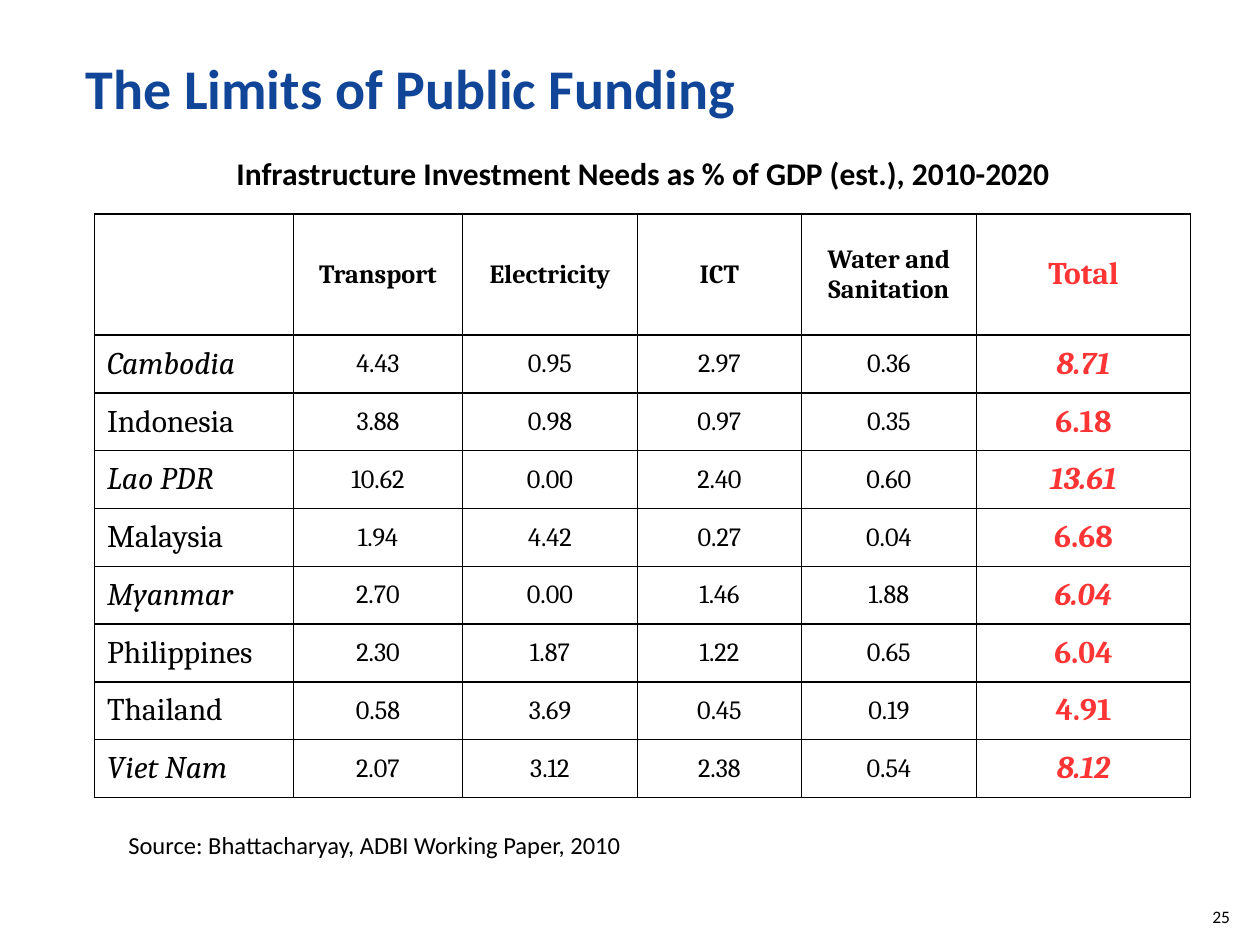
"""Build a slide on infrastructure investment needs in eight countries."""
import dataclasses
import typing

import lxml.etree
import pptx
import pptx.dml.color
import pptx.enum.text
import pptx.oxml.ns
import pptx.util

ALIGN = pptx.enum.text.PP_ALIGN
ANCHOR = pptx.enum.text.MSO_ANCHOR
UNIT = pptx.util.Inches(0.1)


@dataclasses.dataclass(frozen=True)
class Theme:
    heading_font: str = "Calibri"
    table_font: str = "Cambria"
    blue: str = "104597"
    black: str = "000000"
    red: str = "FF3535"
    title: int = 32
    large: int = 18
    figure: int = 15
    source: int = 14
    number: int = 10
    border: int = 1


class Area(typing.NamedTuple):
    column: float
    row: float
    columns: float
    rows: float

    def lengths(self) -> list[int]:
        return [grid(value) for value in self]


class Country(typing.NamedTuple):
    name: str
    figures: str
    italic: bool = False


THEME = Theme()
PAGE = Area(0, 0, 100, 75)
TABLE = Area(7.5, 17, 87.1, 46.3)
COLUMN_WIDTHS = (15.8, 13.4, 13.9, 13, 13.9, 17)
HEADER_HEIGHT = 9.6
HEADERS = ("", "Transport", "Electricity", "ICT", "Water and Sanitation", "Total")
COUNTRIES = (
    Country("Cambodia", "4.43 0.95 2.97 0.36 8.71", italic=True),
    Country("Indonesia", "3.88 0.98 0.97 0.35 6.18"),
    Country("Lao PDR", "10.62 0.00 2.40 0.60 13.61", italic=True),
    Country("Malaysia", "1.94 4.42 0.27 0.04 6.68"),
    Country("Myanmar", "2.70 0.00 1.46 1.88 6.04", italic=True),
    Country("Philippines", "2.30 1.87 1.22 0.65 6.04"),
    Country("Thailand", "0.58 3.69 0.45 0.19 4.91"),
    Country("Viet Nam", "2.07 3.12 2.38 0.54 8.12", italic=True),
)


def grid(units: float) -> int:
    return round(units * UNIT)


def write(frame, text: str, *, size: int, font: str = THEME.heading_font,
          color: str = THEME.black, bold: bool = False, italic: bool = False,
          align=ALIGN.LEFT) -> None:
    para = frame.paragraphs[0]
    para.alignment = align
    span = para.add_run()
    span.text = text
    span.font.name = font
    span.font.size = pptx.util.Pt(size)
    span.font.bold = bold
    span.font.italic = italic
    span.font.color.rgb = pptx.dml.color.RGBColor.from_string(color)


def add_text(page, area: Area, text: str, anchor=ANCHOR.TOP, **style) -> None:
    frame = page.shapes.add_textbox(*area.lengths()).text_frame
    frame.word_wrap = True
    frame.vertical_anchor = anchor
    write(frame, text, **style)


def outline(cell) -> None:
    properties = cell._tc.get_or_add_tcPr()
    for side in ("a:lnL", "a:lnR", "a:lnT", "a:lnB"):
        line = lxml.etree.SubElement(properties, pptx.oxml.ns.qn(side),
                                     w=str(pptx.util.Pt(THEME.border)))
        fill = lxml.etree.SubElement(line, pptx.oxml.ns.qn("a:solidFill"))
        lxml.etree.SubElement(fill, pptx.oxml.ns.qn("a:srgbClr"), val=THEME.black)
    cell.fill.background()


def fill_row(table, row: int, texts: typing.Sequence[str], italic: bool = False) -> None:
    last = len(texts) - 1
    for column, text in enumerate(texts):
        cell = table.cell(row, column)
        cell.vertical_anchor = ANCHOR.MIDDLE
        outline(cell)
        if text:
            write(cell.text_frame, text, font=THEME.table_font,
                  size=THEME.large if column in (0, last) else THEME.figure,
                  color=THEME.red if column == last else THEME.black,
                  bold=row == 0 or column == last,
                  italic=italic and column in (0, last),
                  align=ALIGN.CENTER if column else ALIGN.LEFT)


def add_needs_table(page) -> None:
    table = page.shapes.add_table(len(COUNTRIES) + 1, len(HEADERS),
                                  *TABLE.lengths()).table
    table.first_row = table.horz_banding = False
    for column, width in zip(table.columns, COLUMN_WIDTHS):
        column.width = grid(width)
    for row in table.rows:
        row.height = grid((TABLE.rows - HEADER_HEIGHT) / len(COUNTRIES))
    table.rows[0].height = grid(HEADER_HEIGHT)
    fill_row(table, 0, HEADERS)
    for row, country in enumerate(COUNTRIES, start=1):
        fill_row(table, row, [country.name, *country.figures.split()], country.italic)


def main() -> None:
    deck = pptx.Presentation()
    deck.slide_width, deck.slide_height = grid(PAGE.columns), grid(PAGE.rows)
    page = deck.slides.add_slide(deck.slide_layouts[6])
    add_text(page, Area(5.8, 3.3, 90, 7.2), "The Limits of Public Funding",
             anchor=ANCHOR.MIDDLE, size=THEME.title, color=THEME.blue, bold=True)
    add_needs_table(page)
    add_text(page, Area(9.2, 65.4, 57.5, 3.4),
             "Source: Bhattacharyay, ADBI Working Paper, 2010", size=THEME.source)
    add_text(page, Area(TABLE.column, 11.7, TABLE.columns, 4.2),
             "Infrastructure Investment Needs as % of GDP (est.), 2010-2020",
             size=THEME.large, bold=True, align=ALIGN.CENTER)
    add_text(page, Area(94.6, 70.1, 4, 4), "25", anchor=ANCHOR.BOTTOM,
             size=THEME.number, align=ALIGN.RIGHT)
    deck.save("out.pptx")


if __name__ == "__main__":
    main()
